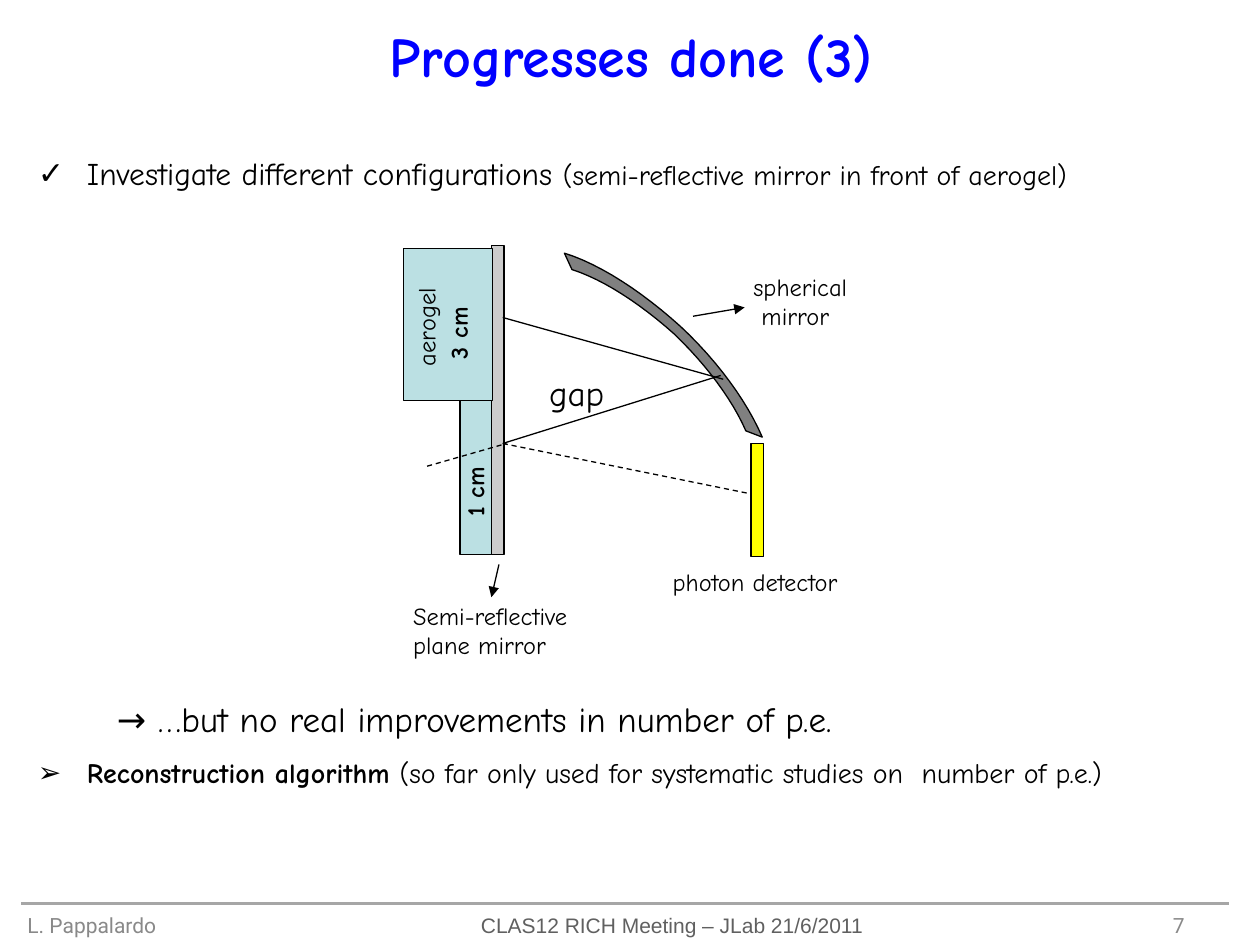
from lxml.etree import SubElement
from pptx import Presentation
from pptx.dml.color import RGBColor
from pptx.enum.dml import MSO_LINE
from pptx.enum.shapes import MSO_CONNECTOR, MSO_SHAPE
from pptx.enum.text import MSO_ANCHOR, MSO_AUTO_SIZE, PP_ALIGN
from pptx.oxml.ns import qn
from pptx.util import Inches, Pt

BLACK = RGBColor(0x00, 0x00, 0x00)
BLUE = RGBColor(0x00, 0x00, 0xFF)
AEROGEL = RGBColor(0xBB, 0xE0, 0xE3)
PLANE_MIRROR = RGBColor(0xCC, 0xCC, 0xCC)
SPHERICAL_MIRROR = RGBColor(0x80, 0x80, 0x80)
DETECTOR = RGBColor(0xFF, 0xFF, 0x00)
RULE = RGBColor(0xA6, 0xA6, 0xA6)
FOOTER = RGBColor(0x89, 0x89, 0x89)
MEETING = RGBColor(0x60, 0x60, 0x60)
FONT = "Comic Neue"

TITLE = "Progresses done (3)"
# Bullet, space before in points, runs of (text, size, bold)
BULLETS = [
    ("✓", 0, [("Investigate different configurations ", 18, False),
              ("(semi-reflective mirror in front of aerogel)", 16, False)]),
    ("➢", 324, [("Reconstruction algorithm ", 16, True),
                ("(so far only used for systematic studies on  number of p.e.)", 16, False)]),
]
# Left, top, width, height, fill
BLOCKS = [
    (3.9, 1.95, 0.1, 2.45, PLANE_MIRROR),
    (3.2, 1.97, 0.71, 1.21, AEROGEL),
    (3.65, 3.18, 0.25, 1.22, AEROGEL),
    (5.96, 3.52, 0.1, 0.9, DETECTOR),
]
# Each edge of the curved mirror: start, two control points, end
INNER_EDGES = [[(4.54, 2.14), (4.79, 2.22), (5.08, 2.41), (5.35, 2.65)],
               [(5.35, 2.65), (5.61, 2.9), (5.81, 3.17), (5.92, 3.42)]]
OUTER_EDGES = [[(6.05, 3.47), (5.93, 3.19), (5.7, 2.87), (5.4, 2.59)],
               [(5.4, 2.59), (5.1, 2.32), (4.77, 2.1), (4.48, 2.01)]]
# From, to
POINTERS = [((3.96, 4.48), (3.9, 4.74)), ((5.5, 2.51), (5.91, 2.44))]
RAYS = [((3.99, 2.52), (5.74, 3.01)), ((5.72, 2.98), (3.99, 3.52))]
DASHED_RAYS = [((3.99, 3.52), (5.96, 3.92)), ((3.39, 3.7), (4.02, 3.52))]
# Paragraphs, left, top, width, height, formatting
LABELS = [
    (["Semi-reflective plane mirror"], 3.18, 4.72, 1.81, 0.57, {}),
    (["spherical", " mirror"], 5.88, 2.11, 1.08, 0.57, {}),
    (["photon detector"], 5.24, 4.45, 1.73, 0.33, {}),
    (["aerogel"], 2.95, 2.41, 0.86, 0.33, {"rotation": 270}),
    (["1 cm"], 3.34, 3.61, 0.85, 0.33, {"rotation": 270, "bold": True}),
    (["3 cm"], 3.21, 2.36, 0.85, 0.33, {"rotation": 270, "bold": True}),
    (["gap"], 4.26, 2.9, 1.1, 0.43, {"size": 20}),
    (["→ …but no real improvements in number of p.e."], 0.83, 5.49, 8.2, 0.44, {"size": 20}),
    (["L. Pappalardo"], 0.12, 7.09, 2.33, 0.4,
     {"size": 12, "font": "Roboto", "color": FOOTER, "anchor": MSO_ANCHOR.BOTTOM}),
    (["7"], 7.17, 7.09, 2.33, 0.4,
     {"size": 12, "font": "Roboto", "color": FOOTER, "anchor": MSO_ANCHOR.BOTTOM,
      "align": PP_ALIGN.RIGHT}),
    (["CLAS12 RICH Meeting – JLab 21/6/2011"], 3.42, 7.19, 3.83, 0.3,
     {"size": 12, "font": "Arial", "color": MEETING, "align": PP_ALIGN.CENTER}),
]


def place(shape, left, top, width, height):
    shape.left, shape.top = Inches(left), Inches(top)
    shape.width, shape.height = Inches(width), Inches(height)


def add_span(para, text, size, bold=False, color=BLACK, font=FONT):
    span = para.add_run()
    span.text = text
    span.font.size = Pt(size)
    span.font.bold = bold
    span.font.name = font
    span.font.color.rgb = color


def add_label(page, texts, left, top, width, height, size=14, bold=False, color=BLACK,
              font=FONT, rotation=0, align=PP_ALIGN.LEFT, anchor=MSO_ANCHOR.TOP):
    box = page.shapes.add_textbox(*map(Inches, (left, top, width, height)))
    box.rotation = rotation
    frame = box.text_frame
    frame.word_wrap = True
    frame.vertical_anchor = anchor
    for index, text in enumerate(texts):
        para = frame.add_paragraph() if index else frame.paragraphs[0]
        para.alignment = align
        add_span(para, text, size, bold, color, font)


def add_line(page, start, end, color=BLACK, width=0.75, dashed=False, arrow=False):
    line = page.shapes.add_connector(MSO_CONNECTOR.STRAIGHT, *map(Inches, start + end))
    line.line.color.rgb = color
    line.line.width = Pt(width)
    if dashed:
        line.line.dash_style = MSO_LINE.DASH
    if arrow:
        SubElement(line._element.spPr.find(qn("a:ln")), qn("a:tailEnd"), type="triangle")
    SubElement(line._element.spPr, qn("a:effectLst"))


def paint(shape, fill):
    shape.shadow.inherit = False
    shape.fill.solid()
    shape.fill.fore_color.rgb = fill
    shape.line.color.rgb = BLACK
    shape.line.width = Pt(0.75)


def curve_points(curve, steps=12):
    """Return points along a cubic Bezier curve, both ends included, as lengths."""
    points = []
    for step in range(steps + 1):
        t = step / steps
        weights = ((1 - t) ** 3, 3 * t * (1 - t) ** 2, 3 * t * t * (1 - t), t ** 3)
        points.append(tuple(Inches(sum(w * p[axis] for w, p in zip(weights, curve)))
                            for axis in (0, 1)))
    return points


def add_title(page):
    title = page.shapes.title
    place(title, 0.2, 0.09, 9.62, 0.7)
    title.text_frame.auto_size = MSO_AUTO_SIZE.NONE
    para = title.text_frame.paragraphs[0]
    para.alignment = PP_ALIGN.CENTER
    add_span(para, TITLE, 32, True, BLUE)


def add_bullets(page):
    body = page.placeholders[1]
    place(body, 0.2, 1.21, 9.62, 5.2)
    frame = body.text_frame
    frame.auto_size = MSO_AUTO_SIZE.NONE
    for index, (bullet, before, spans) in enumerate(BULLETS):
        para = frame.add_paragraph() if index else frame.paragraphs[0]
        para.line_spacing = 0.9
        para.space_before = Pt(before)
        properties = para._p.get_or_add_pPr()
        properties.set("marL", str(Inches(0.39)))
        properties.set("indent", str(Inches(-0.39)))
        SubElement(properties, qn("a:buFont"), typeface="Arial")
        SubElement(properties, qn("a:buChar"), char=bullet)
        for text, size, bold in spans:
            add_span(para, text, size, bold)


def add_diagram(page):
    for left, top, width, height, fill in BLOCKS:
        block = page.shapes.add_shape(MSO_SHAPE.RECTANGLE,
                                      *map(Inches, (left, top, width, height)))
        paint(block, fill)
    outline = [point for edge in INNER_EDGES + OUTER_EDGES for point in curve_points(edge)]
    builder = page.shapes.build_freeform(*outline[0])
    builder.add_line_segments(outline[1:], close=True)
    paint(builder.convert_to_shape(), SPHERICAL_MIRROR)
    for start, end in POINTERS:
        add_line(page, start, end, arrow=True)
    for start, end in RAYS:
        add_line(page, start, end)
    for start, end in DASHED_RAYS:
        add_line(page, start, end, dashed=True)


def main():
    deck = Presentation()
    deck.slide_width, deck.slide_height = Inches(10), Inches(7.5)
    page = deck.slides.add_slide(deck.slide_layouts[1])
    add_title(page)
    add_bullets(page)
    add_diagram(page)
    add_line(page, (0.17, 7.17), (9.75, 7.17), RULE, 2)
    for texts, left, top, width, height, formatting in LABELS:
        add_label(page, texts, left, top, width, height, **formatting)
    deck.save("out.pptx")


if __name__ == "__main__":
    main()
